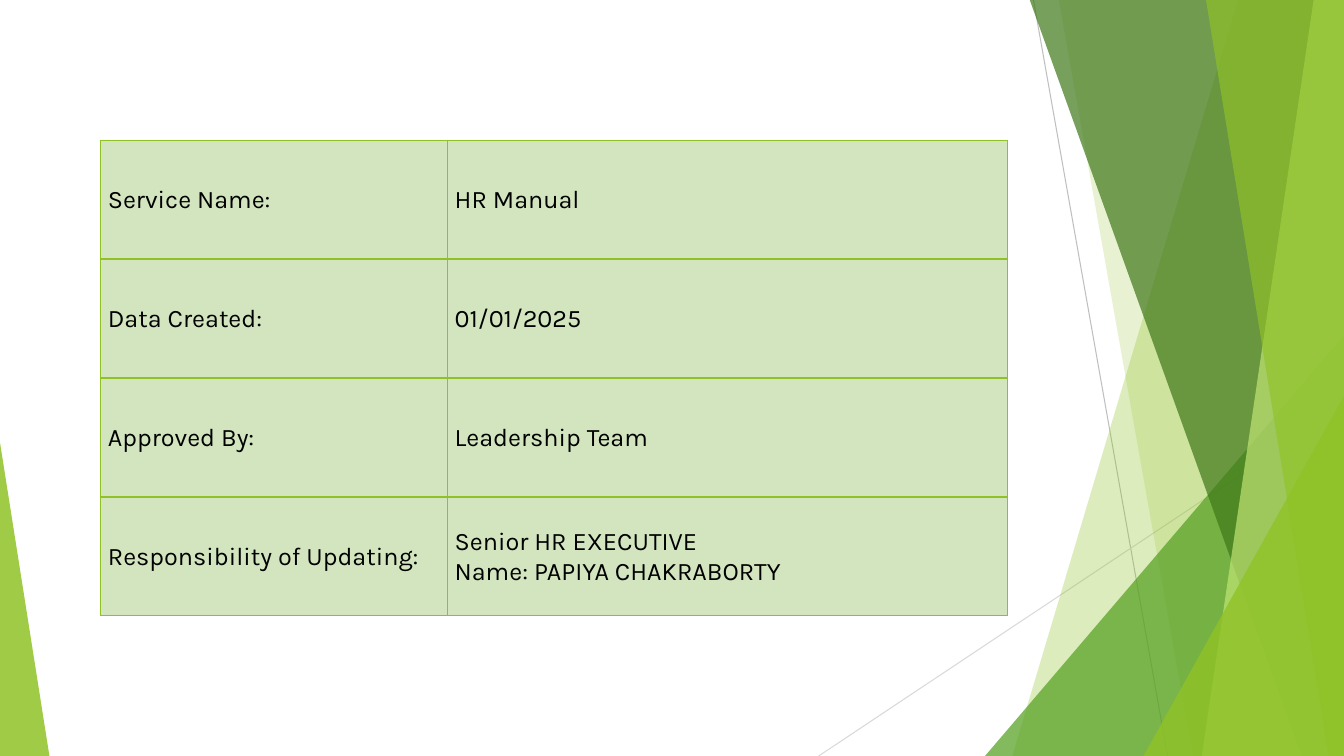
"""Build the HR manual document-details slide."""
from dataclasses import dataclass

from lxml import etree
from pptx import Presentation
from pptx import util as u
from pptx.dml.color import RGBColor
from pptx.enum import shapes, text
from pptx.oxml import ns

W, H = 13.33, 7.5
FACET_TOP = -0.01
COLORS = {
    "lime": "90C226",
    "green": "54A021",
    "forest": "3F7819",
    "pale": "C0E474",
    "cell": "D3E5BF",
    "ink": "000000",
    "gray": "BFBFBF",
    "light_gray": "D9D9D9",
}


@dataclass
class Ray:
    x1: float
    y1: float
    x2: float
    y2: float
    color: str


@dataclass
class Facet:
    """Band reaching the right slide edge, with a slanted left side."""
    top_x: float
    bottom_x: float
    color: str
    alpha: int


@dataclass
class Corner:
    """Right triangle standing on the bottom slide edge."""
    left: float
    top: float
    width: float
    apex: float
    color: str
    alpha: int


RAYS = [
    Ray(10.25, 0, 11.58, H, "gray"),
    Ray(W, 4.03, 8.12, H, "light_gray"),
]
DECOR = [
    Facet(12.28, 10.04, "lime", 30),
    Facet(10.5, 11.83, "lime", 20),
    Corner(9.77, 3.33, 3.56, 1, "green", 72),
    Facet(10.21, 12.91, "forest", 70),
    Facet(13.03, 11.92, "pale", 70),
    Facet(11.96, 13.18, "lime", 65),
    Corner(11.34, 3.93, 1.99, 1, "lime", 80),
    Corner(0, 4.39, 0.49, 0, "lime", 85),
]
DETAILS = [
    ("Service Name:", "HR Manual"),
    ("Data Created:", "01/01/2025"),
    ("Approved By:", "Leadership Team"),
    ("Responsibility of Updating:", "Senior HR EXECUTIVE\vName: PAPIYA CHAKRABORTY"),
]
COL_WIDTHS = (3.44, 5.55)
ROW_HEIGHT = 1.18


def rgb(name: str) -> RGBColor:
    """Look up a named colour."""
    return RGBColor.from_string(COLORS[name])


def draw_ray(s, ray: Ray) -> None:
    """Draw a thin straight line."""
    ends = [u.Inches(v) for v in (ray.x1, ray.y1, ray.x2, ray.y2)]
    cxn = s.shapes.add_connector(shapes.MSO_CONNECTOR.STRAIGHT, *ends)
    cxn.line.color.rgb = rgb(ray.color)
    cxn.line.width = u.Pt(0.75)
    etree.SubElement(cxn._element.spPr, ns.qn("a:effectLst"))


def draw_decor(s, item: Facet | Corner) -> None:
    """Draw one translucent facet or corner."""
    if isinstance(item, Facet):
        points = [(W, FACET_TOP), (W, H), (item.bottom_x, H)]
        fb = s.shapes.build_freeform(u.Inches(item.top_x), u.Inches(FACET_TOP))
        fb.add_line_segments([(u.Inches(x), u.Inches(y)) for x, y in points])
        sp = fb.convert_to_shape()
    else:
        box = (item.left, item.top, item.width, H - item.top)
        sp = s.shapes.add_shape(
            shapes.MSO_SHAPE.ISOSCELES_TRIANGLE, *[u.Inches(v) for v in box])
        sp.adjustments[0] = item.apex
    sp.shadow.inherit = False
    sp.line.fill.background()
    sp.fill.solid()
    sp.fill.fore_color.rgb = rgb(item.color)
    clr = sp._element.spPr.find(ns.qn("a:solidFill"))[0]
    etree.SubElement(clr, ns.qn("a:alpha"), val=str(item.alpha * 1000))


def style_cell(cell, content: str) -> None:
    """Fill, border and label one table cell."""
    tcPr = cell._tc.get_or_add_tcPr()
    for side in ("lnL", "lnR", "lnT", "lnB"):
        ln = etree.SubElement(tcPr, ns.qn(f"a:{side}"), w=str(u.Pt(1)))
        fill = etree.SubElement(ln, ns.qn("a:solidFill"))
        etree.SubElement(fill, ns.qn("a:srgbClr"), val=COLORS["lime"])
    cell.fill.solid()
    cell.fill.fore_color.rgb = rgb("cell")
    cell.vertical_anchor = text.MSO_ANCHOR.MIDDLE
    cell.margin_left = u.Inches(0.07)
    cell.margin_right = cell.margin_top = u.Inches(0.01)
    cell.margin_bottom = 0
    tf = cell.text_frame
    tf.text = content
    for r in tf.paragraphs[0].runs:
        r.font.name = "Karla"
        r.font.size = u.Pt(18)
        r.font.color.rgb = rgb("ink")


def draw_table(s) -> None:
    """Draw the document details table."""
    table = s.shapes.add_table(
        len(DETAILS), len(COL_WIDTHS), u.Inches(1), u.Inches(1.39),
        u.Inches(sum(COL_WIDTHS)), u.Inches(ROW_HEIGHT * len(DETAILS))).table
    table.first_row = table.horz_banding = False
    for col, width in zip(table.columns, COL_WIDTHS):
        col.width = u.Inches(width)
    for row, contents in zip(table.rows, DETAILS):
        row.height = u.Inches(ROW_HEIGHT)
        for cell, content in zip(row.cells, contents):
            style_cell(cell, content)


def main() -> None:
    """Assemble and save the slide."""
    prs = Presentation()
    prs.slide_width, prs.slide_height = u.Inches(W), u.Inches(H)
    s = prs.slides.add_slide(prs.slide_layouts[6])
    for ray in RAYS:
        draw_ray(s, ray)
    for item in DECOR:
        draw_decor(s, item)
    draw_table(s)
    prs.save("out.pptx")


if __name__ == "__main__":
    main()
